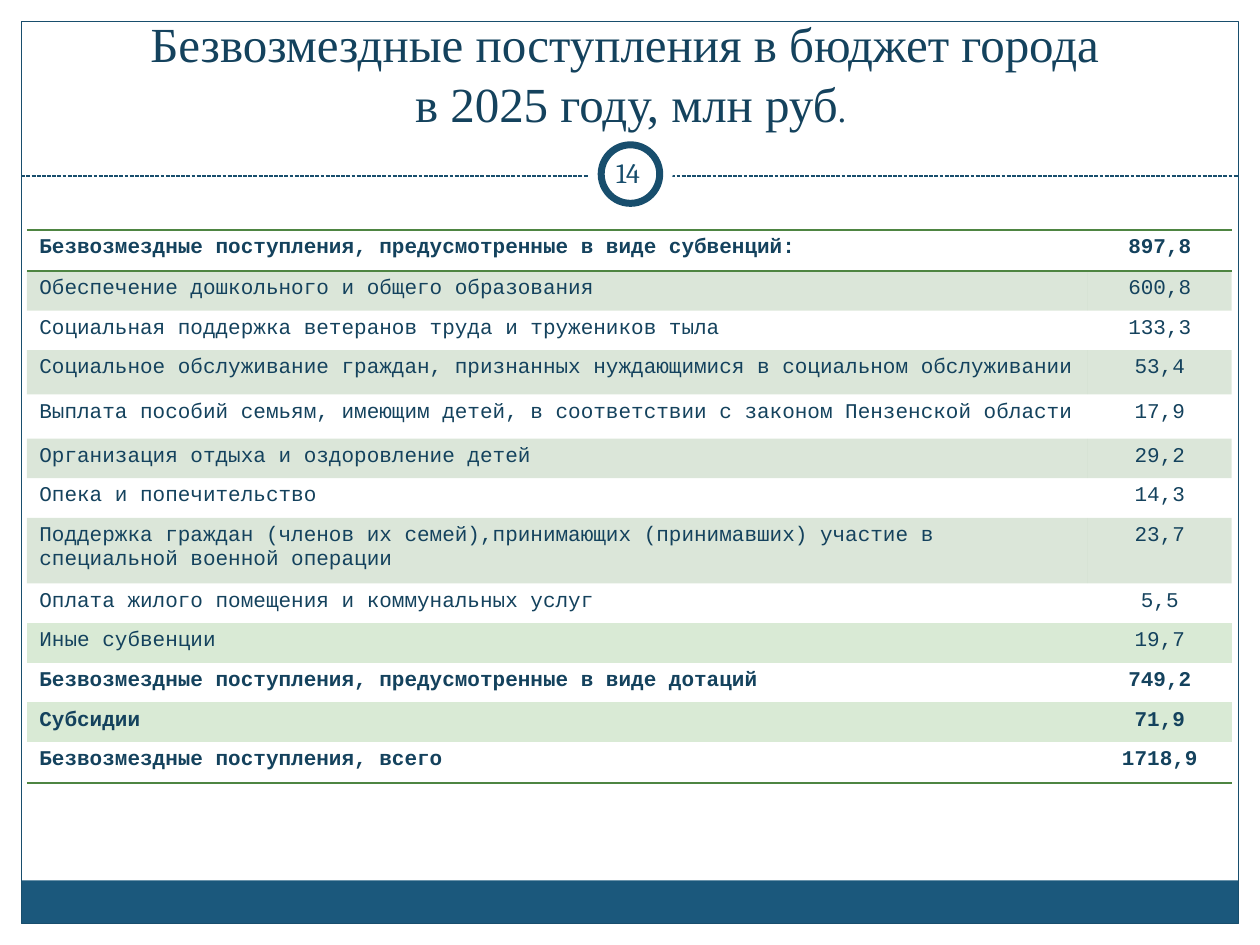
import pptx
import pptx.util
import pptx.dml.color
import pptx.enum.dml
import pptx.enum.shapes
import pptx.enum.text
import pptx.oxml
import pptx.oxml.ns

Cm, Pt = pptx.util.Cm, pptx.util.Pt
RGB = pptx.dml.color.RGBColor
KIND = pptx.enum.shapes.MSO_SHAPE
ALIGN = pptx.enum.text.PP_ALIGN
ANCHOR = pptx.enum.text.MSO_ANCHOR

WHITE = RGB(0xFF, 0xFF, 0xFF)
BLUE = RGB(0x1B, 0x58, 0x7C)
EDGE = RGB(0x18, 0x4E, 0x6D)
INK = RGB(0x14, 0x42, 0x5D)
GREEN = RGB(0x4E, 0x85, 0x42)
PALE = RGB(0xD9, 0xEA, 0xD5)

WIDE, HIGH = 25.4, 19.05
EDGE_W = 0.43

# label, value, row height, bold, fill (GREEN is drawn as a 20 % tint)
ROWS = [
    ("Безвозмездные поступления, предусмотренные в виде субвенций:", "897,8", 0.82, True, None),
    ("Обеспечение дошкольного и общего образования", "600,8", 0.8, False, GREEN),
    ("Социальная поддержка ветеранов труда и тружеников тыла", "133,3", 0.8, False, None),
    ("Социальное обслуживание граждан, признанных нуждающимися в социальном обслуживании",
     "53,4", 0.89, False, GREEN),
    ("Выплата пособий семьям, имеющим детей, в соответствии с законом Пензенской области",
     "17,9", 0.89, False, None),
    ("Организация отдыха и оздоровление детей", "29,2", 0.8, False, GREEN),
    ("Опека и попечительство", "14,3", 0.8, False, None),
    ("Поддержка граждан (членов их семей),принимающих (принимавших) участие в "
     "специальной военной операции", "23,7", 1.32, False, GREEN),
    ("Оплата жилого помещения и коммунальных услуг", "5,5", 0.8, False, None),
    ("Иные субвенции", "19,7", 0.8, False, PALE),
    ("Безвозмездные поступления, предусмотренные в виде дотаций", "749,2", 0.8, True, WHITE),
    ("Субсидии", "71,9", 0.8, True, PALE),
    ("Безвозмездные поступления, всего", "1718,9", 0.82, True, WHITE),
]


def add_xml(parent, text, index=None):
    node = pptx.oxml.parse_xml(text.replace(">", " " + pptx.oxml.ns.nsdecls("a") + ">", 1)
                               if "/>" not in text.split(">")[0] + ">"
                               else text.replace("/>", " " + pptx.oxml.ns.nsdecls("a") + "/>", 1))
    if index is None:
        parent.append(node)
    else:
        parent.insert(index, node)


def add_form(slide, kind, box, fill=None, line=None, width=0.75):
    form = slide.shapes.add_shape(kind, *map(Cm, box))
    form.shadow.inherit = False
    if fill is None:
        form.fill.background()
    else:
        form.fill.solid()
        form.fill.fore_color.rgb = fill
    if line is None:
        form.line.fill.background()
    else:
        form.line.color.rgb = line
        form.line.width = Pt(width)


def add_text(slide, box, anchor, inset):
    frame = slide.shapes.add_textbox(*map(Cm, box)).text_frame
    frame.word_wrap = True
    frame.vertical_anchor = anchor
    frame.margin_left = frame.margin_right = Cm(inset)
    frame.margin_top = frame.margin_bottom = Cm(0.13)
    return frame


def add_frame(slide, left, top, width, height):
    # White margins, bottom band and outline
    add_form(slide, KIND.RECTANGLE, (0, 0, WIDE, 3.86), WHITE)
    for side in (0, WIDE - EDGE_W):
        add_form(slide, KIND.RECTANGLE, (side, 0, EDGE_W, HIGH), WHITE)
    band = 0.87
    add_form(slide, KIND.RECTANGLE, (left, top + height - band, width, band), BLUE)
    add_form(slide, KIND.RECTANGLE, (left, top, width, height), line=EDGE)


def add_rule(slide, left, mid, width):
    # Dashed rule
    rule = slide.shapes.add_connector(pptx.enum.shapes.MSO_CONNECTOR.STRAIGHT,
                                      Cm(left), Cm(mid), Cm(left + width), Cm(mid))
    rule.line.color.rgb = EDGE
    rule.line.width = Pt(0.75)
    rule.line.dash_style = pptx.enum.dml.MSO_LINE.SQUARE_DOT
    add_xml(rule._element.spPr, "<a:effectLst/>")


def add_badge(slide, left, top, size):
    # Page number in a ring
    add_form(slide, KIND.OVAL, (left, top, size, size), WHITE)
    gap = 0.26
    ring = size - 2 * gap
    add_form(slide, KIND.OVAL, (left + gap, top + gap, ring, ring), WHITE, EDGE, 4)
    frame = add_text(slide, (left + 0.2, top + 0.2, 1.27, 1.22), ANCHOR.MIDDLE, 0.13)
    frame.margin_left = Cm(0.36)
    para = frame.paragraphs[0]
    para.text = "14"
    para.font.size = Pt(16)
    para.font.name = "Cambria"
    para.font.color.rgb = EDGE


def add_title(slide, *box):
    para = add_text(slide, box, ANCHOR.BOTTOM, 0.25).paragraphs[0]
    para.alignment = ALIGN.CENTER
    para.line_spacing = 1.03
    para.font.name = "Times New Roman"
    para.font.color.rgb = INK
    for index, (text, size) in enumerate([("Безвозмездные поступления в бюджет города ", 28),
                                          ("в 2025 году, млн руб", 28), (".", 20)]):
        if index == 1:
            para.add_line_break()
        run = para.add_run()
        run.text = text
        run.font.size = Pt(size)


def set_cell(cell, text, bold, fill, align, lines):
    para = cell.text_frame.paragraphs[0]
    para.text = text
    para.alignment = align
    para.font.size = Pt(12)
    para.font.name = "Courier New"
    para.font.bold = bold
    para.font.color.rgb = INK
    if fill is None:
        cell.fill.background()
    else:
        cell.fill.solid()
        cell.fill.fore_color.rgb = fill
    props = cell._tc.get_or_add_tcPr()
    if fill == GREEN:
        add_xml(props.find(".//" + pptx.oxml.ns.qn("a:srgbClr")), '<a:alpha val="20000"/>')
    for index, side in enumerate("LRTB"):
        paint = (f'<a:solidFill><a:srgbClr val="{GREEN}"/></a:solidFill>'
                 if side in lines else "<a:noFill/>")
        add_xml(props, f'<a:ln{side} w="12700">{paint}</a:ln{side}>', index)


def add_grid(slide, left, top, width):
    # Table of receipts
    total = sum(row[2] for row in ROWS)
    grid = slide.shapes.add_table(len(ROWS), 2, Cm(left), Cm(top), Cm(width), Cm(total)).table
    grid.first_row = grid.horz_banding = False
    grid.columns[1].width = Cm(2.9)
    grid.columns[0].width = Cm(width - 2.9)
    ruled = {0: "TB", 1: "T", len(ROWS) - 1: "B"}
    for index, (label, value, height, bold, fill) in enumerate(ROWS):
        grid.rows[index].height = Cm(height)
        for col, text, align in ((0, label, ALIGN.LEFT), (1, value, ALIGN.CENTER)):
            set_cell(grid.cell(index, col), text, bold, fill, align, ruled.get(index, ""))


def main():
    deck = pptx.Presentation()
    deck.slide_width, deck.slide_height = Cm(WIDE), Cm(HIGH)
    slide = deck.slides.add_slide(deck.slide_layouts[6])
    inner = WIDE - 2 * EDGE_W
    add_frame(slide, EDGE_W, EDGE_W, inner, HIGH - 2 * EDGE_W)
    add_rule(slide, EDGE_W, 3.55, inner)
    add_badge(slide, 11.86, 2.66, 1.7)
    add_title(slide, 0.84, 0.64, 23.75, 2.16)
    add_grid(slide, 0.54, 4.64, 24.29)
    deck.save("out.pptx")


if __name__ == "__main__":
    main()
